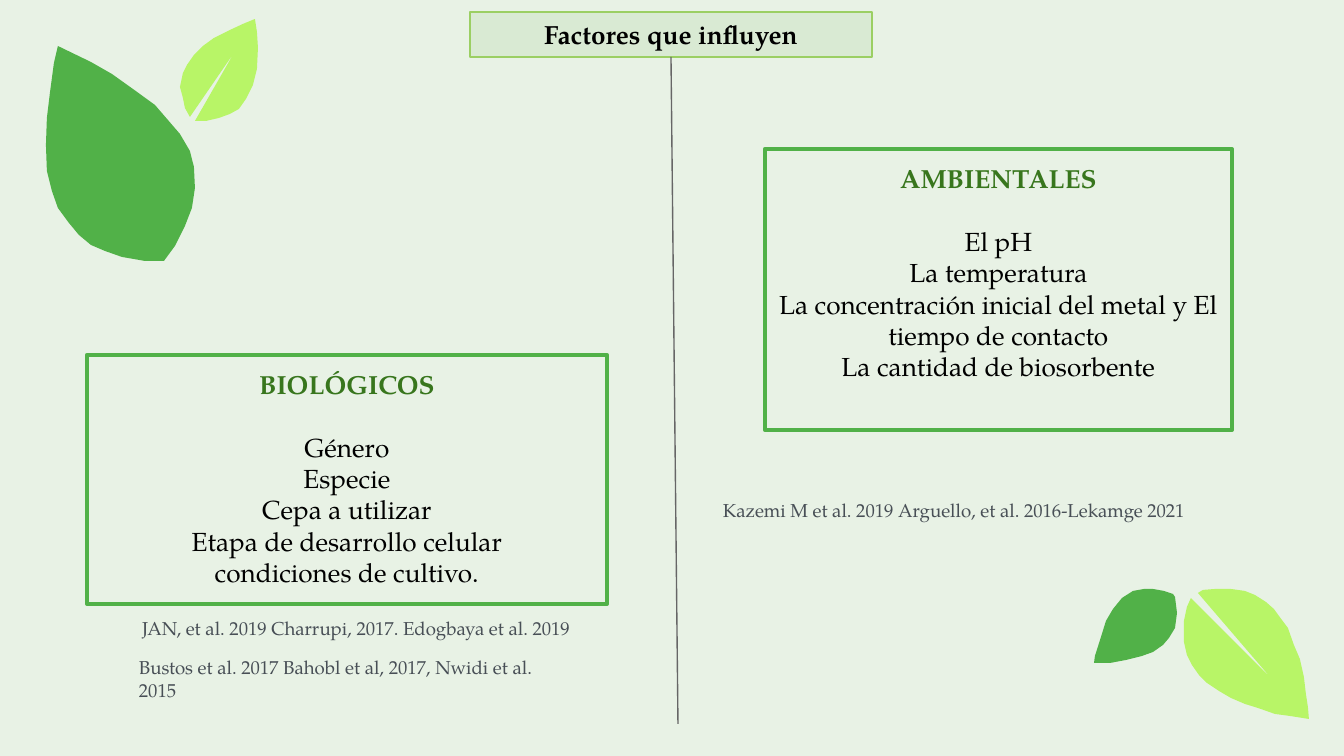
from lxml.etree import SubElement
from pptx import Presentation
from pptx.dml.color import RGBColor
from pptx.enum.shapes import MSO_CONNECTOR, MSO_SHAPE
from pptx.enum.text import MSO_ANCHOR, PP_ALIGN
from pptx.oxml.ns import qn
from pptx.util import Emu, Pt

PX = 914400 / 134.4
WIDE, HIGH = 1344, 756

THEME = {
    "font": "TeX Gyre Pagella",
    "back": "E8F2E5", "pale": "D9EAD3", "lime": "B8F567", "green": "51B148",
    "edge": "9BCF63", "grey": "666666",
    "title": {"size": Pt(14), "bold": True, "color": "000000"},
    "head": {"size": Pt(14), "bold": True, "color": "38761D"},
    "body": {"size": Pt(14), "bold": False, "color": "000000"},
    "cite": {"size": Pt(10), "bold": False, "color": "484F56"},
}

TITLE = ("Factores que influyen", (470, 12, 402, 45))
AXIS_END = (678, 724)

PANELS = [
    ("BIOLÓGICOS", (87, 355, 520, 249), [
        "Género\nEspecie\nCepa a utilizar\n"
        "Etapa de desarrollo celular\ncondiciones de cultivo."]),
    ("AMBIENTALES", (765, 149, 467, 281), [
        "El pH",
        "La temperatura",
        "La concentración inicial del metal y El tiempo de contacto",
        "La cantidad de biosorbente"]),
]

CITES = [
    ("Kazemi M et al. 2019 Arguello, et al. 2016-Lekamge 2021",
     (710, 488, 578, 50), PP_ALIGN.LEFT),
    ("JAN, et al. 2019 Charrupi, 2017. Edogbaya et al. 2019",
     (32, 606, 648, 50), PP_ALIGN.CENTER),
    ("Bustos et al. 2017 Bahobl et al, 2017, Nwidi et al. 2015",
     (126, 643, 441, 73), PP_ALIGN.LEFT),
]

LEAVES = [
    ("lime", [
        (1282, 620), (1274, 609), (1266, 602), (1255, 595), (1245, 591),
        (1231, 589), (1215, 589), (1203, 590), (1198, 593), (1271, 678),
        (1191, 598), (1187, 607), (1184, 621), (1184, 642), (1187, 655),
        (1192, 665), (1199, 675), (1207, 683), (1219, 691), (1231, 698),
        (1245, 704), (1258, 708), (1275, 714), (1290, 716), (1309, 719),
        (1308, 707), (1306, 694), (1304, 677), (1300, 659), (1294, 645),
        (1288, 628)]),
    ("green", [
        (1173, 594), (1164, 591), (1153, 589), (1144, 589), (1133, 591),
        (1122, 598), (1113, 609), (1106, 621), (1101, 637), (1095, 656),
        (1094, 663), (1110, 663), (1126, 660), (1142, 656), (1153, 652),
        (1163, 645), (1169, 638), (1175, 628), (1177, 613), (1175, 597)]),
    ("lime", [
        (180, 87), (183, 98), (185, 108), (190, 117), (234, 53), (195, 121),
        (206, 121), (219, 118), (230, 114), (239, 109), (246, 99), (253, 85),
        (257, 69), (258, 48), (257, 32), (255, 19), (243, 24), (228, 31),
        (214, 38), (203, 46), (194, 55), (187, 65), (183, 73)]),
    ("green", [
        (164, 261), (175, 246), (185, 226), (192, 208), (195, 188),
        (194, 167), (190, 151), (180, 134), (168, 120), (155, 105),
        (133, 89), (112, 74), (91, 62), (58, 46), (54, 63), (50, 93),
        (47, 118), (46, 145), (47, 171), (52, 191), (58, 208), (69, 223),
        (79, 235), (91, 245), (105, 251), (122, 257), (145, 261)]),
]


def emu(nums):
    return [Emu(round(n * PX)) for n in nums]


def paint(fill, tone):
    fill.solid()
    fill.fore_color.rgb = RGBColor.from_string(tone)


def stroke(line, tone, width):
    paint(line.fill, tone)
    line.width = Pt(width)


def write(shape, rows, align, pad, anchor=MSO_ANCHOR.TOP):
    """Fill a shape with rows of (text, theme style, space after in pt)."""
    frame = shape.text_frame
    left, top = emu((13, pad))
    form = {"word_wrap": True, "vertical_anchor": anchor,
            "margin_left": left, "margin_right": left,
            "margin_top": top, "margin_bottom": top}
    for key, value in form.items():
        setattr(frame, key, value)
    for i, (text, style, gap) in enumerate(rows):
        para = frame.add_paragraph() if i else frame.paragraphs[0]
        para.text = text
        para.alignment = align
        para.space_after = Pt(gap)
        for run in para.runs:
            run.font.name = THEME["font"]
            for key, value in THEME[style].items():
                if key == "color":
                    run.font.color.rgb = RGBColor.from_string(value)
                else:
                    setattr(run.font, key, value)


def add_box(shapes, place, tone, width):
    box = shapes.add_shape(MSO_SHAPE.RECTANGLE, *emu(place))
    box.shadow.inherit = False
    box.fill.background()
    stroke(box.line, tone, width)
    return box


def add_leaf(shapes, tone, dots):
    pen = shapes.build_freeform(*dots[0], scale=PX)
    pen.add_line_segments(dots[1:], close=True)
    leaf = pen.convert_to_shape()
    leaf.shadow.inherit = False
    paint(leaf.fill, THEME[tone])
    leaf.line.fill.background()


def main():
    deck = Presentation()
    deck.slide_width, deck.slide_height = emu((WIDE, HIGH))
    slide = deck.slides.add_slide(deck.slide_layouts[6])
    paint(slide.background.fill, THEME["back"])
    shapes = slide.shapes

    for tone, dots in LEAVES:
        add_leaf(shapes, tone, dots)

    text, place = TITLE
    title = add_box(shapes, place, THEME["edge"], 0.75)
    paint(title.fill, THEME["pale"])
    write(title, [(text, "title", 0)], PP_ALIGN.CENTER, 6, MSO_ANCHOR.MIDDLE)

    end = emu(AXIS_END)
    axis = shapes.add_connector(MSO_CONNECTOR.STRAIGHT, *end, *end)
    axis.begin_connect(title, 2)
    stroke(axis.line, THEME["grey"], 0.75)
    SubElement(axis.element.spPr, qn("a:effectLst"))

    for head, place, items in PANELS:
        box = add_box(shapes, place, THEME["green"], 2.25)
        rows = [(head, "head", 17)] + [(item, "body", 0) for item in items]
        write(box, rows, PP_ALIGN.CENTER, 13)

    for text, place, align in CITES:
        note = shapes.add_textbox(*emu(place))
        write(note, [(text, "cite", 0)], align, 13)

    deck.save("out.pptx")


if __name__ == "__main__":
    main()
